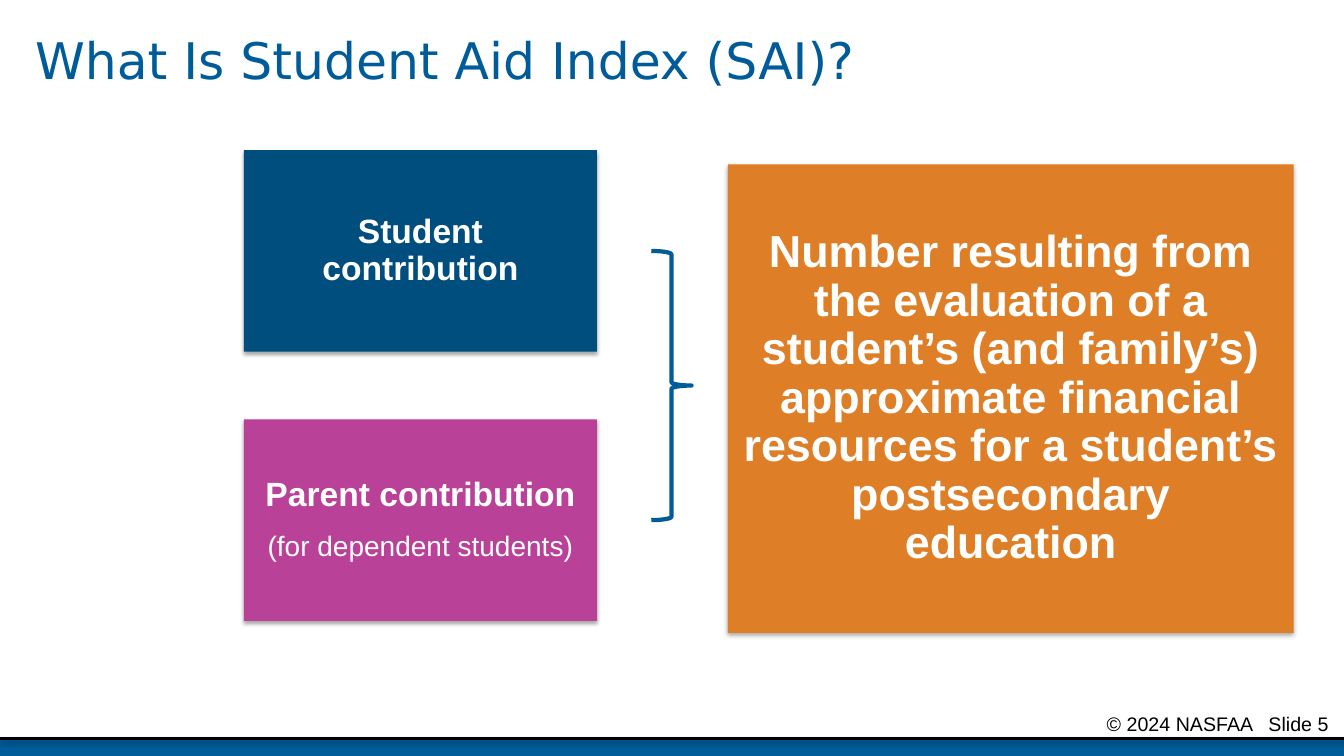
from lxml import etree
from pptx import Presentation
from pptx.dml.color import RGBColor
from pptx.enum.shapes import MSO_CONNECTOR, MSO_SHAPE
from pptx.enum.text import MSO_ANCHOR, PP_ALIGN
from pptx.oxml.ns import qn
from pptx.util import Inches, Pt

RECTANGLE, BRACE = MSO_SHAPE.RECTANGLE, MSO_SHAPE.RIGHT_BRACE
STRAIGHT = MSO_CONNECTOR.STRAIGHT
MIDDLE = MSO_ANCHOR.MIDDLE
LEFT, CENTER, RIGHT = PP_ALIGN.LEFT, PP_ALIGN.CENTER, PP_ALIGN.RIGHT

BLUE = RGBColor(0x00, 0x5B, 0x99)
NAVY = RGBColor(0x00, 0x4E, 0x7D)
MAGENTA = RGBColor(0xB9, 0x41, 0x97)
ORANGE = RGBColor(0xDE, 0x7E, 0x26)
BLACK = RGBColor(0x00, 0x00, 0x00)
WHITE = RGBColor(0xFF, 0xFF, 0xFF)

WIDTH, HEIGHT = 13.33, 7.5
FOOTER_TOP = 7.33


class SlideBuilder:
    body_font = "Arial"
    title_font = "DejaVu Sans"

    def __init__(self, page):
        self.page = page

    def shadow(self, shape, distance, opacity):
        """Add a soft shadow falling straight down."""
        effects = etree.SubElement(shape._element.spPr, qn("a:effectLst"))
        outer = etree.SubElement(
            effects, qn("a:outerShdw"), blurRad=str(Pt(3.1)),
            dist=str(Pt(distance)), dir="5400000", rotWithShape="0")
        color = etree.SubElement(outer, qn("a:srgbClr"), val=str(BLACK))
        etree.SubElement(color, qn("a:alpha"), val=str(opacity * 1000))

    def set_text(self, box, paragraphs, align, margins, spacing=None):
        """Fill a box from (text, font values, paragraph values) entries."""
        frame = box.text_frame
        frame.word_wrap = True
        frame.vertical_anchor = MIDDLE
        for side, size in margins.items():
            setattr(frame, f"margin_{side}", Inches(size))
        for index, (text, font, layout) in enumerate(paragraphs):
            para = frame.add_paragraph() if index else frame.paragraphs[0]
            for name, value in {"alignment": align, "line_spacing": spacing, **layout}.items():
                setattr(para, name, value)
            span = para.add_run()
            span.text = text
            values = {"name": self.body_font, **font}
            span.font.color.rgb = values.pop("color")
            for name, value in values.items():
                setattr(span.font, name, value)

    def rectangle(self, left, top, width, height, fill):
        box = self.page.shapes.add_shape(
            RECTANGLE, Inches(left), Inches(top), Inches(width), Inches(height))
        box.fill.solid()
        box.fill.fore_color.rgb = fill
        box.line.fill.background()
        return box

    def band(self, *place, fill):
        self.rectangle(*place, fill).shadow.inherit = False

    def card(self, *place, fill, paragraphs):
        box = self.rectangle(*place, fill)
        self.shadow(box, 1.8, 35)
        sides = dict.fromkeys(("left", "top", "right", "bottom"), 0.15)
        self.set_text(box, paragraphs, CENTER, sides, 0.9)

    def text(self, left, top, width, height, text, font, align, margins, spacing=None):
        box = self.page.shapes.add_textbox(
            Inches(left), Inches(top), Inches(width), Inches(height))
        self.set_text(box, [(text, font, {})], align, margins, spacing)

    def rule(self, top, color, weight):
        line = self.page.shapes.add_connector(
            STRAIGHT, 0, Inches(top), Inches(WIDTH), Inches(top))
        line.line.color.rgb = color
        line.line.width = Pt(weight)
        self.shadow(line, 1.6, 38)

    def brace(self, left, top, width, height, color, weight):
        brace = self.page.shapes.add_shape(
            BRACE, Inches(left), Inches(top), Inches(width), Inches(height))
        brace.shadow.inherit = False
        brace.fill.background()
        brace.line.color.rgb = color
        brace.line.width = Pt(weight)


def main():
    deck = Presentation()
    deck.slide_width, deck.slide_height = Inches(WIDTH), Inches(HEIGHT)
    slide = SlideBuilder(deck.slides.add_slide(deck.slide_layouts[6]))

    # Footer
    slide.text(8.33, 7, 5, 0.36, "© 2024 NASFAA   Slide 5",
               {"size": Pt(14), "color": BLACK}, RIGHT, {"right": 0.15})
    slide.band(0, FOOTER_TOP, WIDTH, HEIGHT - FOOTER_TOP, fill=BLUE)
    slide.rule(FOOTER_TOP, BLACK, 2)

    # Title
    slide.text(0.25, 0, 11.33, 1.25, "What Is Student Aid Index (SAI)?",
               {"name": slide.title_font, "size": Pt(36), "color": BLUE}, LEFT, {}, 0.9)

    # Definition
    definition = ("Number resulting from the evaluation of a student’s (and family’s) "
                  "approximate financial resources for a student’s postsecondary education")
    heading = {"size": Pt(24), "bold": True, "color": WHITE}
    slide.card(7.22, 1.63, 5.61, 4.65, fill=ORANGE,
               paragraphs=[(definition, {**heading, "size": Pt(32)}, {})])

    # Contributions
    note = {"size": Pt(20), "bold": False, "color": WHITE}
    contributions = [
        (NAVY, [("Student contribution", heading, {})]),
        (MAGENTA, [("Parent contribution", heading, {}),
                   ("(for dependent students)", note, {"space_before": Pt(13)})]),
    ]
    for row, (fill, paragraphs) in enumerate(contributions):
        slide.card(2.42, 1.49 + row * 2.67, 3.5, 2, fill=fill, paragraphs=paragraphs)
    slide.brace(6.46, 2.49, 0.4, 2.67, BLUE, 3)

    deck.save("out.pptx")


if __name__ == "__main__":
    main()
